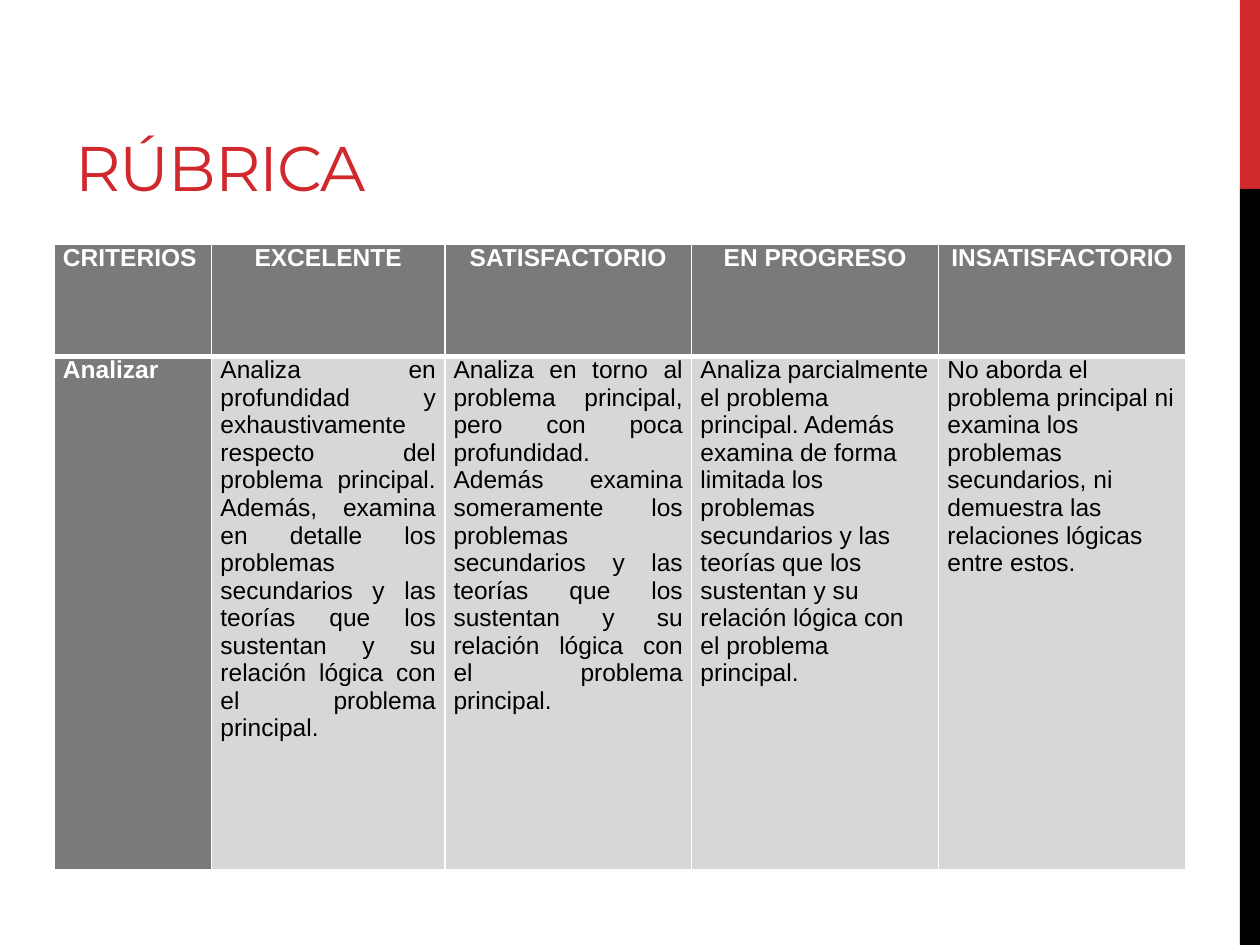
from dataclasses import dataclass

from lxml import etree
from pptx import Presentation
from pptx import util as u
from pptx.dml.color import RGBColor
from pptx.enum import shapes, text
from pptx.oxml import ns

Inches, Pt = u.Inches, u.Pt


@dataclass(frozen=True)
class Theme:
    red: str = "D1282E"
    black: str = "000000"
    white: str = "FFFFFF"
    dark: str = "7A7A7A"
    light: str = "D7D7D7"
    title_font: str = "Montserrat"
    body_font: str = "Arial"
    title_size: float = 36
    body_size: float = 14


theme = Theme()
LEFT, CENTER, JUSTIFY = text.PP_ALIGN.LEFT, text.PP_ALIGN.CENTER, text.PP_ALIGN.JUSTIFY


def write(frame, words, font=theme.body_font, size=theme.body_size, color=theme.black,
          bold=False, align=LEFT, before=0, after=0, tracking=None):
    para = frame.paragraphs[0]
    para.alignment = align
    para.space_before, para.space_after = Pt(before), Pt(after)
    span = para.add_run()
    span.text = words
    span.font.name, span.font.size, span.font.bold = font, Pt(size), bold
    span.font.color.rgb = RGBColor.from_string(color)
    if tracking is not None:
        span.font._element.set("spc", str(round(tracking * 100)))


def set_borders(cell, color, widths):
    """Draw the cell's edges; widths maps L, R, T, B to points."""
    props = cell._tc.get_or_add_tcPr()
    for index, (side, width) in enumerate(widths.items()):
        line = etree.Element(ns.qn(f"a:ln{side}"), w=str(Pt(width)))
        fill = etree.SubElement(line, ns.qn("a:solidFill"))
        etree.SubElement(fill, ns.qn("a:srgbClr"), val=color)
        props.insert(index, line)


deck = Presentation()
deck.slide_width, deck.slide_height = Inches(10), Inches(7.5)
page = deck.slides.add_slide(deck.slide_layouts[6])

# Side band
for top, height, color in [(0, 1.5, theme.red), (1.5, 6, theme.black)]:
    band = page.shapes.add_shape(shapes.MSO_SHAPE.RECTANGLE, Inches(9.84), Inches(top),
                                 Inches(0.16), Inches(height))
    band.shadow.inherit = False
    band.fill.solid()
    band.fill.fore_color.rgb = RGBColor.from_string(color)
    band.line.fill.background()

# Title
box = page.shapes.add_textbox(Inches(0.5), Inches(0.17), Inches(6.33), Inches(1.5))
box.text_frame.word_wrap = True
box.text_frame.vertical_anchor = text.MSO_ANCHOR.BOTTOM
write(box.text_frame, "RÚBRICA", font=theme.title_font, size=theme.title_size,
      color=theme.red, tracking=-0.6)

# Rubric: level, description, alignment of the description
rubric = [
    ("CRITERIOS", "Analizar", LEFT),
    ("EXCELENTE", "Analiza en profundidad y exhaustivamente respecto del problema principal. "
     "Además, examina en detalle los problemas secundarios y las teorías que los sustentan "
     "y su relación lógica con el problema principal.", JUSTIFY),
    ("SATISFACTORIO", "Analiza en torno al problema principal, pero con poca profundidad. "
     "Además examina someramente los problemas secundarios y las teorías que los sustentan "
     "y su relación lógica con el problema principal.", JUSTIFY),
    ("EN PROGRESO", "Analiza parcialmente el problema principal. Además examina de forma "
     "limitada los problemas secundarios y las teorías que los sustentan y su relación "
     "lógica con el problema principal.", LEFT),
    ("INSATISFACTORIO", "No aborda el problema principal ni examina los problemas "
     "secundarios, ni demuestra las relaciones lógicas entre estos.", LEFT),
]
column_widths = [1.25, 1.85, 1.96, 1.96, 1.96]
row_heights = [0.89, 4.07]

table = page.shapes.add_table(len(row_heights), len(rubric), Inches(0.43), Inches(1.94),
                              Inches(sum(column_widths)), Inches(sum(row_heights))).table
for column, width in zip(table.columns, column_widths):
    column.width = Inches(width)
for row, height in zip(table.rows, row_heights):
    row.height = Inches(height)

for col, (level, description, align) in enumerate(rubric):
    for row, words in enumerate((level, description)):
        is_header = row == 0
        is_label = is_header or col == 0
        cell = table.cell(row, col)
        cell.margin_left = cell.margin_right = Inches(0.07)
        cell.margin_top = cell.margin_bottom = 0
        cell.fill.solid()
        cell.fill.fore_color.rgb = RGBColor.from_string(theme.dark if is_label else theme.light)
        set_borders(cell, theme.white,
                    {"L": 1, "R": 1, "T": 1 if is_header else 3, "B": 3 if is_header else 1})
        write(cell.text_frame, words, bold=is_label,
              color=theme.white if is_label else theme.black,
              align=CENTER if is_header and col else align,
              before=1.5, after=0 if is_header else 7.5)

deck.save("out.pptx")
